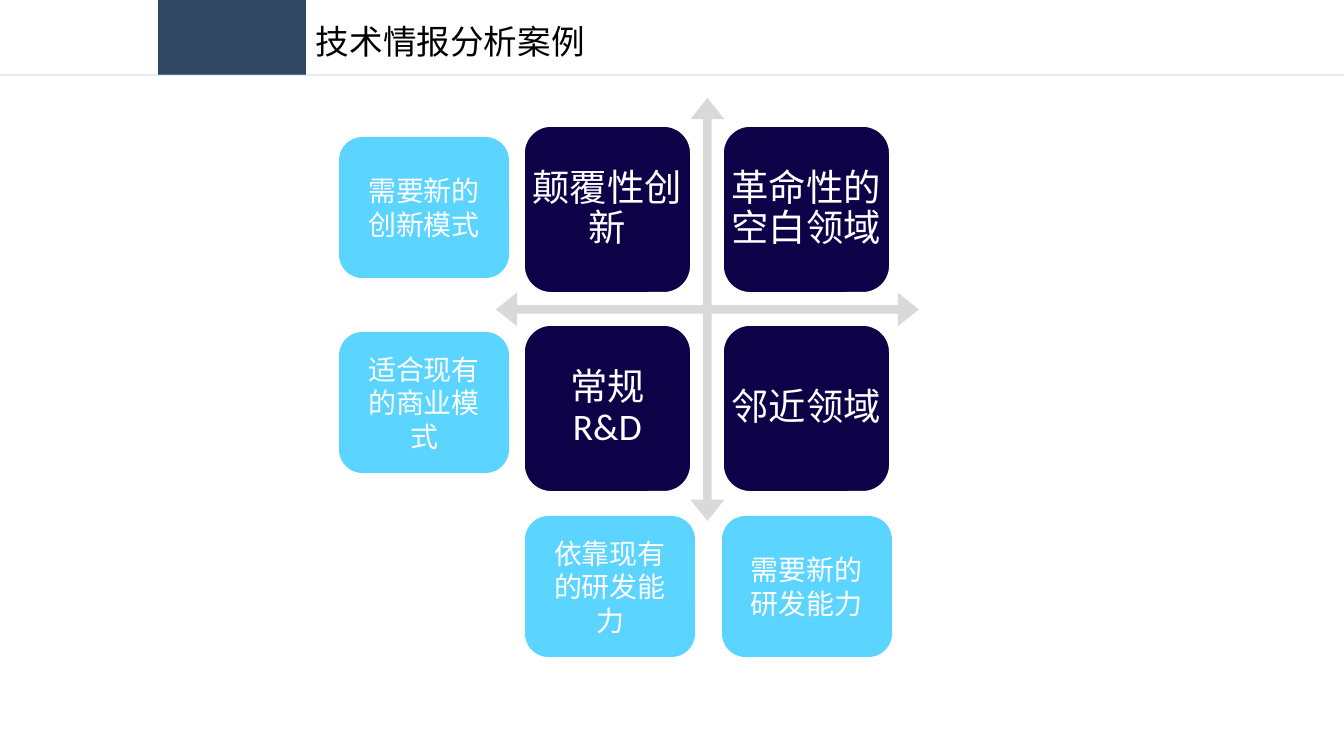
from lxml import etree
from pptx import Presentation
from pptx import util as u
from pptx.dml.color import RGBColor
from pptx.enum import shapes, text
from pptx.oxml.ns import qn

SCALE = 914400 / 134.4  # EMU per px
CJK = "Noto Sans CJK SC"
WHITE = "FFFFFF"


def px(*lengths):
    return [u.Emu(round(length * SCALE)) for length in lengths]


def add_block(preset, box, color):
    """Add a borderless preset shape; box is left, top, width, height in px."""
    block = slide.shapes.add_shape(preset, *px(*box))
    block.shadow.inherit = False
    block.fill.solid()
    block.fill.fore_color.rgb = RGBColor.from_string(color)
    block.line.fill.background()
    return block


prs = Presentation()
prs.slide_width, prs.slide_height = px(1344, 756)
slide = prs.slides.add_slide(prs.slide_layouts[6])

# Header
add_block(shapes.MSO_SHAPE.RECTANGLE, (158, 0, 148, 75), "314865")
rule = slide.shapes.add_connector(shapes.MSO_CONNECTOR.STRAIGHT, *px(0, 75, 1344, 75))
rule.line.width = u.Pt(0.75)
rule.line.color.rgb = RGBColor.from_string("BFBFBF")
rule_color = rule.line._get_or_add_ln().find(".//" + qn("a:srgbClr"))
etree.SubElement(rule_color, qn("a:alpha"), val="50000")
etree.SubElement(rule._element.spPr, qn("a:effectLst"))

title = slide.shapes.add_textbox(*px(306, 9, 907, 65)).text_frame
title.word_wrap = True
title.vertical_anchor = text.MSO_ANCHOR.MIDDLE
title.margin_left, title.margin_right = px(10, 10)
title.margin_top, title.margin_bottom = px(5, 5)
heading = title.paragraphs[0]
heading.text = "技术情报分析案例"
heading.font.size = u.Pt(18)
heading.font.name = "Arial"
heading.font.color.rgb = RGBColor.from_string("000000")

# Matrix axes
axes = add_block(shapes.MSO_SHAPE.QUAD_ARROW, (496, 98, 423, 423), "D9D9D9")
for index, ratio in enumerate((0.02, 0.04, 0.05)):
    axes.adjustments[index] = ratio

# Matrix quadrants: runs of (text, font), row by row
quadrants = [
    [("颠覆性创新", CJK)],
    [("革命性的空白领域", CJK)],
    [("常规 ", CJK), ("R&D", "Calibri")],
    [("邻近领域", CJK)],
]
TILE, PITCH = 169, 199
for index, runs in enumerate(quadrants):
    row, column = divmod(index, 2)
    box = (523 + column * PITCH, 125 + row * PITCH, TILE, TILE)
    quadrant = add_block(shapes.MSO_SHAPE.ROUNDED_RECTANGLE, box, "0D0248")
    quadrant.line.color.rgb = RGBColor.from_string(WHITE)
    quadrant.line.width = u.Pt(2)
    frame = quadrant.text_frame
    frame.word_wrap = True
    frame.vertical_anchor = text.MSO_ANCHOR.MIDDLE
    frame.margin_left, frame.margin_right = px(1, 1)
    frame.margin_top, frame.margin_bottom = px(0, 0)
    label = frame.paragraphs[0]
    label.alignment = text.PP_ALIGN.CENTER
    label.line_spacing = 0.9
    label.font.size = u.Pt(20)
    label.font.color.rgb = RGBColor.from_string(WHITE)
    for words, font in runs:
        run = label.add_run()
        run.text = words
        run.font.name = font
        run.font.size = u.Pt(20)
        run.font.color.rgb = RGBColor.from_string(WHITE)

# Axis labels
axis_labels = [
    ("需要新的创新模式", 339, 137),
    ("适合现有的商业模式", 339, 332),
    ("依靠现有的研发能力", 525, 516),
    ("需要新的研发能力", 722, 516),
]
for words, left, top in axis_labels:
    axis_label = add_block(
        shapes.MSO_SHAPE.ROUNDED_RECTANGLE, (left, top, 170, 141), "5BD4FF"
    )
    frame = axis_label.text_frame
    frame.word_wrap = True
    frame.vertical_anchor = text.MSO_ANCHOR.MIDDLE
    label = frame.paragraphs[0]
    label.text = words
    label.alignment = text.PP_ALIGN.CENTER
    label.font.size = u.Pt(15)
    label.font.name = CJK
    label.font.color.rgb = RGBColor.from_string(WHITE)

prs.save("out.pptx")
